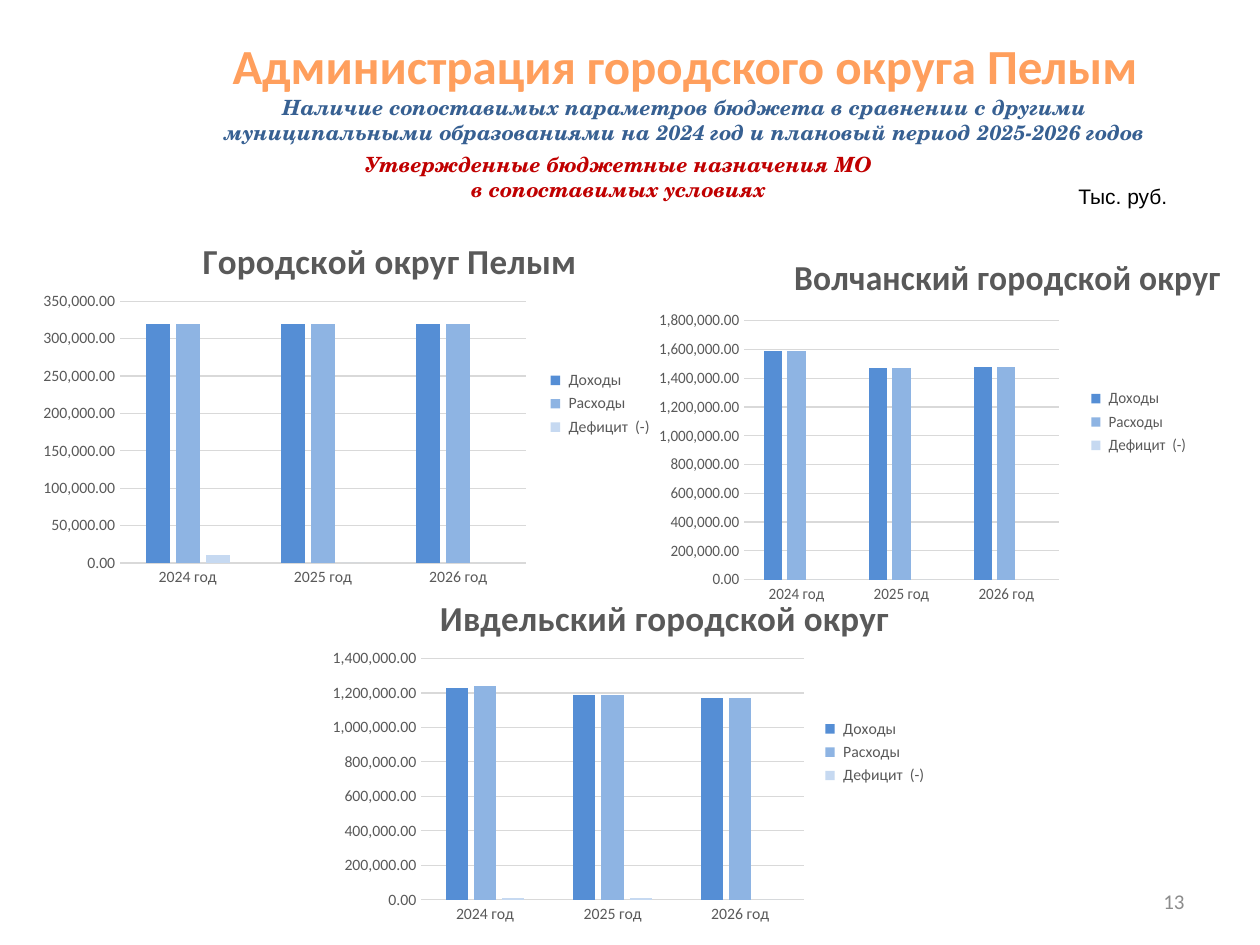
from lxml.etree import SubElement
from pptx import Presentation
from pptx.chart.data import CategoryChartData
from pptx.dml.color import RGBColor
from pptx.enum.chart import XL_CHART_TYPE as ChartType, XL_LEGEND_POSITION as LegendPosition
from pptx.enum.chart import XL_TICK_MARK as TickMark
from pptx.enum.text import MSO_ANCHOR as Anchor, MSO_AUTO_SIZE as AutoSize, PP_ALIGN as Align
from pptx.oxml import parse_xml
from pptx.oxml.ns import nsdecls, qn
from pptx.util import Inches, Pt

HEADING = {"name": "Calibri", "size": Pt(28), "bold": True, "color": "FF9F5D"}
SUBTITLE = {"name": "TeX Gyre Schola", "size": Pt(12), "bold": True, "italic": True, "color": "376092"}
BUDGET_NOTE = {**SUBTITLE, "color": "C00000"}
PAGE_NUMBER = {"name": "Calibri", "size": Pt(12), "color": "8C8C8C"}
UNIT = {"name": "Arial", "size": Pt(12), "color": "000000"}
CHART_TITLE = {"name": "Calibri", "size": Pt(20), "bold": True, "color": "595959"}
CHART_LABEL = {"name": "Calibri", "size": Pt(9), "bold": False, "color": "595959"}

YEARS = ["2024 год", "2025 год", "2026 год"]
INDICATORS = [(" Доходы", "558ED5"), (" Расходы", "8EB4E3"), (" Дефицит  (-)", "C6D9F1")]
DISTRICTS = [
    {
        "title": "Городской округ Пелым",
        "box": (0.25, 1.7, 5.03, 3.01),
        "title_at": (0.26, 0.04),
        "plot_at": (0.14, 0.23, 0.64, 0.69),
        "scale": (350000, 50000),
        "values": [(320000, 320000, 320000), (320000, 320000, 320000), (10000, 0, 0)],
    },
    {
        "title": "Ивдельский городской округ",
        "box": (2.56, 4.54, 4.9, 2.86),
        "title_at": (0.18, 0.04),
        "plot_at": (0.16, 0.24, 0.62, 0.67),
        "scale": (1400000, 200000),
        "values": [(1230000, 1190000, 1170000), (1240000, 1190000, 1170000), (10000, 10000, 0)],
    },
    {
        "title": "Волчанский городской округ",
        "box": (5.16, 1.86, 4.58, 2.98),
        "title_at": (0.25, 0.03),
        "plot_at": (0.17, 0.23, 0.57, 0.69),
        "legend_at": (0.79, 0.4),
        "scale": (1800000, 200000),
        "values": [(1590000, 1470000, 1480000), (1590000, 1470000, 1480000), (0, 0, 0)],
    },
]


def rgb(color):
    return RGBColor.from_string(color)


def format_font(font, style):
    for key, value in style.items():
        if key == "color":
            font.color.rgb = rgb(value)
        else:
            setattr(font, key, value)


def move(placeholder, box):
    for side, length in zip(("left", "top", "width", "height"), box):
        setattr(placeholder, side, Inches(length))


def write_lines(frame, lines, align, anchor=Anchor.TOP):
    frame.word_wrap = True
    frame.auto_size = AutoSize.NONE
    frame.vertical_anchor = anchor
    for index, (text, style) in enumerate(lines):
        paragraph = frame.add_paragraph() if index else frame.paragraphs[0]
        paragraph.alignment = align
        paragraph.space_before = Pt(0)
        run = paragraph.add_run()
        run.text = text
        format_font(run.font, style)


def remove_bullets(frame):
    for paragraph in frame.paragraphs:
        properties = paragraph._p.get_or_add_pPr()
        properties.set("marL", "0")
        properties.set("indent", "0")
        SubElement(properties, qn("a:buNone"))


def add_label(slide, box, text, style, align, anchor):
    label = slide.shapes.add_textbox(*map(Inches, box))
    write_lines(label.text_frame, [(text, style)], align, anchor)


def set_layout(part, position, fractions, inner=False):
    for old_layout in part.findall(qn("c:layout")):
        part.remove(old_layout)
    layout = parse_xml(f"<c:layout {nsdecls('c')}><c:manualLayout/></c:layout>")
    settings = [("layoutTarget", "inner")] if inner else []
    settings += [("xMode", "edge"), ("yMode", "edge")]
    settings += zip("xywh", fractions)
    for tag, value in settings:
        SubElement(layout[0], qn(f"c:{tag}")).set("val", str(value))
    part.insert(position, layout)


def format_axes(chart, maximum, step):
    for axis in (chart.category_axis, chart.value_axis):
        axis.major_tick_mark = axis.minor_tick_mark = TickMark.NONE
        format_font(axis.tick_labels.font, CHART_LABEL)
    values = chart.value_axis
    values.minimum_scale, values.maximum_scale, values.major_unit = 0, maximum, step
    values.tick_labels.number_format = "#,##0.00"
    values.tick_labels.number_format_is_linked = False
    values.format.line.fill.background()
    for line in (chart.category_axis.format.line, values.major_gridlines.format.line):
        line.color.rgb = rgb("D9D9D9")
        line.width = Pt(0.75)


def add_budget_chart(slide, district):
    budget = CategoryChartData(number_format="#,##0.00")
    budget.categories = YEARS
    for (indicator, _), amounts in zip(INDICATORS, district["values"]):
        budget.add_series(indicator, amounts)
    box = map(Inches, district["box"])
    chart = slide.shapes.add_chart(ChartType.COLUMN_CLUSTERED, *box, budget).chart
    format_font(chart.font, {"name": "Calibri", "size": Pt(10), "color": "000000"})

    chart.has_title = True
    heading = chart.chart_title.text_frame.paragraphs[0].add_run()
    heading.text = district["title"]
    format_font(heading.font, CHART_TITLE)
    set_layout(chart.chart_title._element, 1, district["title_at"])

    chart.has_legend = True
    chart.legend.position = LegendPosition.RIGHT
    chart.legend.include_in_layout = False
    format_font(chart.legend.font, CHART_LABEL)
    if "legend_at" in district:
        set_layout(chart.legend._element, 1, district["legend_at"])

    columns = chart.plots[0]
    columns.gap_width, columns.overlap, columns.vary_by_categories = 219, -27, False
    for series, (_, color) in zip(columns.series, INDICATORS):
        series.format.fill.solid()
        series.format.fill.fore_color.rgb = rgb(color)
    format_axes(chart, *district["scale"])
    set_layout(chart._chartSpace.chart.plotArea, 0, district["plot_at"], inner=True)


def main():
    presentation = Presentation()
    presentation.slide_width, presentation.slide_height = Inches(10), Inches(7.5)
    slide = presentation.slides.add_slide(presentation.slide_layouts[1])
    title, body = slide.placeholders

    move(title, (1.38, 0.15, 8.11, 0.67))
    title.text_frame.margin_top = Inches(0.13)
    write_lines(title.text_frame, [
        ("Администрация городского округа Пелым", HEADING),
        ("Наличие сопоставимых параметров бюджета в сравнении с другими "
         "муниципальными образованиями на 2024 год и плановый период 2025-2026 годов", SUBTITLE),
    ], Align.CENTER)

    move(body, (0.25, 1.15, 9.32, 6.22))
    write_lines(body.text_frame, [
        ("Утвержденные бюджетные назначения МО", BUDGET_NOTE),
        ("в сопоставимых условиях", BUDGET_NOTE),
    ], Align.CENTER)
    remove_bullets(body.text_frame)

    add_label(slide, (7.17, 6.95, 2.33, 0.4), "13", PAGE_NUMBER, Align.RIGHT, Anchor.MIDDLE)
    add_label(slide, (8.46, 1.41, 1.1, 0.3), "Тыс. руб.", UNIT, Align.LEFT, Anchor.TOP)
    for district in DISTRICTS:
        add_budget_chart(slide, district)
    presentation.save("out.pptx")


if __name__ == "__main__":
    main()
